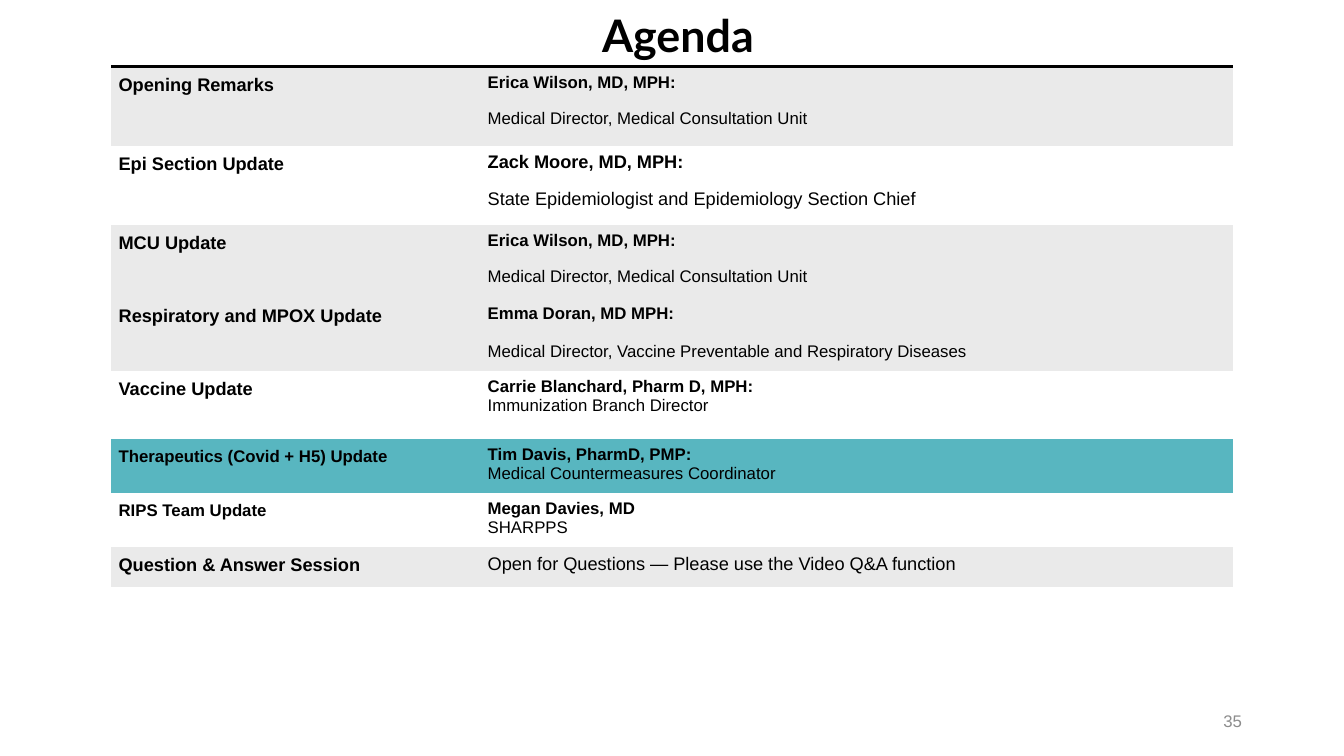
from dataclasses import dataclass

from lxml import etree
from pptx import Presentation
from pptx.dml.color import RGBColor
from pptx.enum.text import MSO_ANCHOR, PP_ALIGN
from pptx.oxml.ns import qn
from pptx.util import Cm, Pt

LEFT, CENTER, RIGHT = PP_ALIGN.LEFT, PP_ALIGN.CENTER, PP_ALIGN.RIGHT
TOP, MIDDLE = MSO_ANCHOR.TOP, MSO_ANCHOR.MIDDLE
TITLE_ONLY = 5
PLAIN_TABLE_STYLE = "{2D5ABB26-0587-4C30-8999-92F81FD0307C}"


@dataclass(frozen=True)
class Theme:
    """Colours, fonts and type sizes of the slide."""
    ink: str = "000000"
    muted: str = "8C8C8C"
    band: str = "EAEAEA"
    highlight: str = "58B6C0"
    heading_font: str = "Lato"
    body_font: str = "Arial"
    title: float = 32
    large: float = 13
    small: float = 12


THEME = Theme()
COLUMN_WIDTHS = (9.3, 18.98)
LOOSE, BLANK_LINE, TIGHT = 12, 13.6, 0

AGENDA = [
    (1.99, THEME.band, "Opening Remarks", THEME.large, THEME.small, LOOSE,
     "Erica Wilson, MD, MPH:", "Medical Director, Medical Consultation Unit"),
    (1.99, None, "Epi Section Update", THEME.large, THEME.large, LOOSE,
     "Zack Moore, MD, MPH:", "State Epidemiologist and Epidemiology Section Chief"),
    (1.84, THEME.band, "MCU Update", THEME.large, THEME.small, LOOSE,
     "Erica Wilson, MD, MPH:", "Medical Director, Medical Consultation Unit"),
    (1.84, THEME.band, "Respiratory and MPOX Update", THEME.large, THEME.small, BLANK_LINE,
     "Emma Doran, MD MPH:", "Medical Director, Vaccine Preventable and Respiratory Diseases"),
    (1.72, None, "Vaccine Update", THEME.large, THEME.small, TIGHT,
     "Carrie Blanchard, Pharm D, MPH:", "Immunization Branch Director"),
    (1.36, THEME.highlight, "Therapeutics (Covid + H5) Update", THEME.small, THEME.small, TIGHT,
     "Tim Davis, PharmD, PMP:", "Medical Countermeasures Coordinator"),
    (1.36, None, "RIPS Team Update", THEME.small, THEME.small, TIGHT,
     "Megan Davies, MD", "SHARPPS"),
    (1.01, THEME.band, "Question & Answer Session", THEME.large, THEME.large, TIGHT,
     None, "Open for Questions — Please use the Video Q&A function"),
]


def write(paragraph, text, size, font=THEME.body_font, color=THEME.ink, bold=False,
          align=LEFT, space_before=0, line_spacing=1.0):
    """Put formatted text into a paragraph."""
    paragraph.alignment = align
    paragraph.line_spacing = line_spacing
    if space_before:
        paragraph.space_before = Pt(space_before)
    run = paragraph.add_run()
    run.text = text
    run.font.name = font
    run.font.size = Pt(size)
    run.font.bold = bold
    run.font.color.rgb = RGBColor.from_string(color)


class SlideBuilder:
    """Holds the theme and the current slide."""

    def __init__(self, presentation, theme):
        """Add a title-only slide."""
        self.theme = theme
        self.slide = presentation.slides.add_slide(presentation.slide_layouts[TITLE_ONLY])

    def title(self, text, left, top, width, height):
        """Move and format the title placeholder."""
        shape = self.slide.shapes.title
        shape.left, shape.top, shape.width, shape.height = map(Cm, (left, top, width, height))
        shape.text_frame.word_wrap = False
        shape.text_frame.vertical_anchor = TOP
        write(shape.text_frame.paragraphs[0], text, self.theme.title,
              font=self.theme.heading_font, bold=True, align=CENTER)

    def page_number(self, text, left, top, width, height):
        """Add the page number."""
        shape = self.slide.shapes.add_textbox(*map(Cm, (left, top, width, height)))
        shape.text_frame.word_wrap = True
        shape.text_frame.vertical_anchor = MIDDLE
        write(shape.text_frame.paragraphs[0], text, self.theme.small,
              color=self.theme.muted, align=RIGHT)

    def cell(self, cell, fill):
        """Set the margins and fill of a cell and return its text frame."""
        cell.margin_left = cell.margin_right = Cm(0.19)
        cell.margin_top = cell.margin_bottom = Cm(0.17)
        if fill:
            cell.fill.solid()
            cell.fill.fore_color.rgb = RGBColor.from_string(fill)
        else:
            cell.fill.background()
        return cell.text_frame

    def top_border(self, cell, width):
        """Draw a line along the top of a cell."""
        line = etree.Element(qn("a:lnT"), w=str(Pt(width)))
        solid = etree.SubElement(line, qn("a:solidFill"))
        etree.SubElement(solid, qn("a:srgbClr"), val=self.theme.ink)
        cell._tc.get_or_add_tcPr().insert(0, line)

    def agenda(self, rows, left, top):
        """Add the table of topics and speakers."""
        width, height = sum(COLUMN_WIDTHS), sum(row[0] for row in rows)
        frame = self.slide.shapes.add_table(len(rows), len(COLUMN_WIDTHS),
                                            *map(Cm, (left, top, width, height)))
        table = frame.table
        table.first_row = table.horz_banding = False
        table._tbl.tblPr.find(qn("a:tableStyleId")).text = PLAIN_TABLE_STYLE
        for column, column_width in zip(table.columns, COLUMN_WIDTHS):
            column.width = Cm(column_width)
        for index, (row_height, fill, topic, topic_size, size, gap, speaker, role) in enumerate(rows):
            table.rows[index].height = Cm(row_height)
            topic_frame = self.cell(table.cell(index, 0), fill)
            write(topic_frame.paragraphs[0], topic, topic_size, bold=True, line_spacing=1.07)
            speaker_frame = self.cell(table.cell(index, 1), fill)
            paragraph = speaker_frame.paragraphs[0]
            if speaker:
                write(paragraph, speaker, size, bold=True)
                paragraph = speaker_frame.add_paragraph()
            write(paragraph, role, size, space_before=gap)
        for cell in table.rows[0].cells:
            self.top_border(cell, 2.25)


def main():
    """Build and save the agenda slide."""
    presentation = Presentation()
    presentation.slide_width, presentation.slide_height = Cm(33.87), Cm(19.05)
    builder = SlideBuilder(presentation, THEME)
    builder.page_number("35", 23.93, 17.65, 7.62, 1.02)
    builder.agenda(AGENDA, 2.8, 1.68)
    builder.title("Agenda", 14.9, 0.06, 4.37, 1.63)
    presentation.save("out.pptx")


if __name__ == "__main__":
    main()
